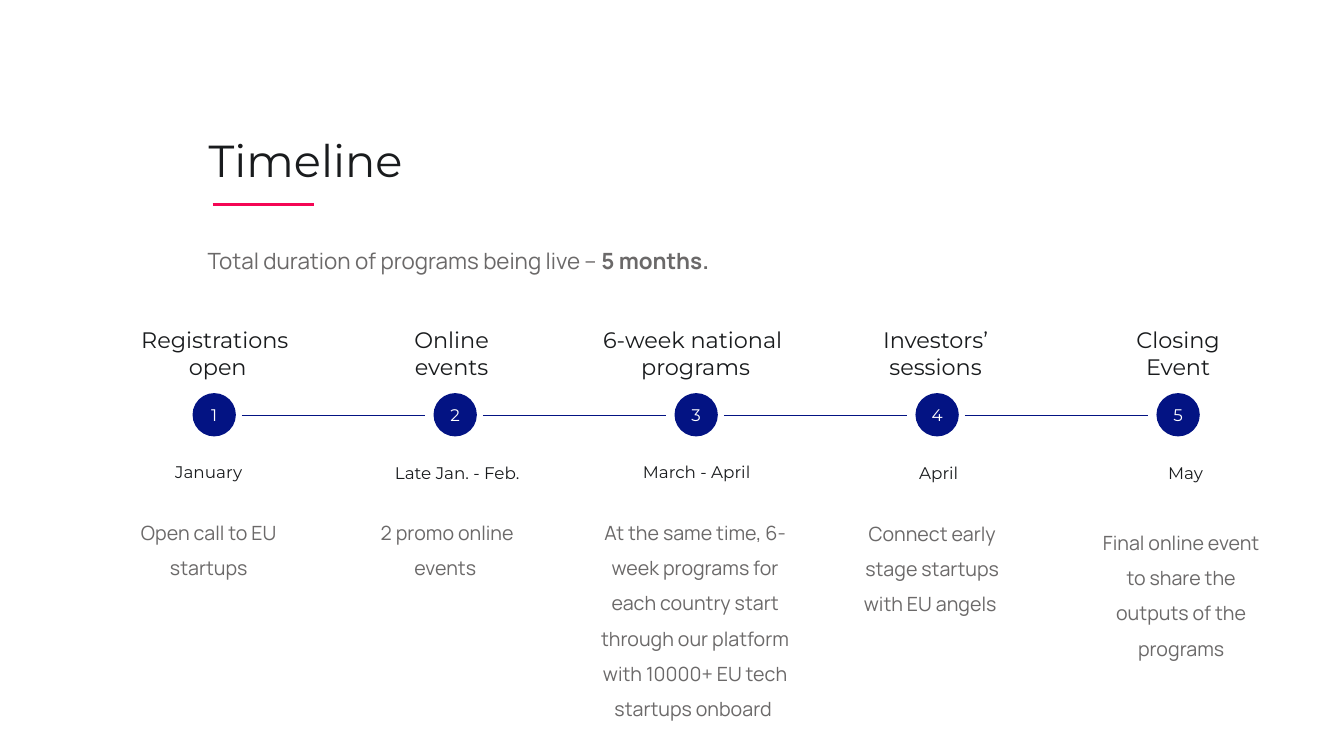
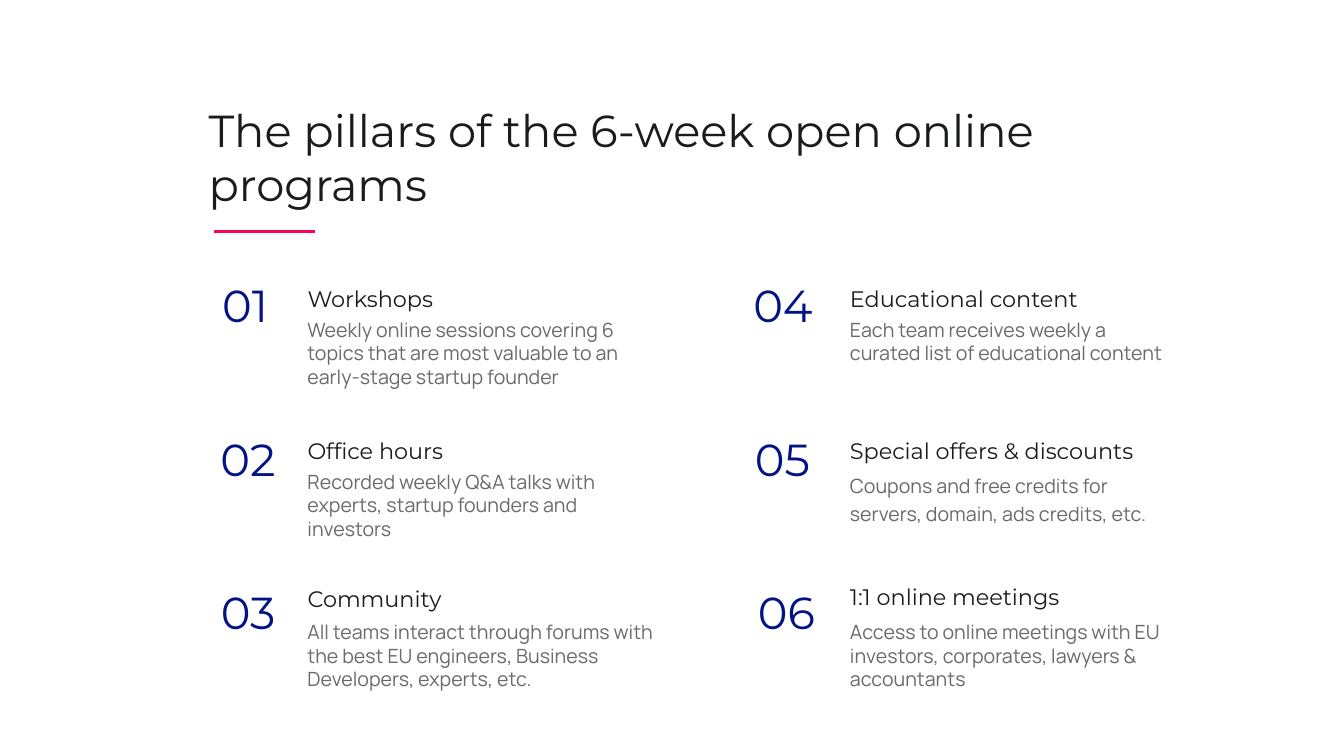
import dataclasses
import itertools
import typing

import lxml.etree
import pptx
import pptx.dml.color
import pptx.enum.shapes
import pptx.enum.text
import pptx.oxml.ns
import pptx.util

EMU_PER_PX = 9144  # 100 px to the inch
COLORS = {
    "ink": "191B1D",
    "grey": "6B6969",
    "navy": "031383",
    "accent": "F40654",
    "white": "FFFFFF",
}
ALIGN = pptx.enum.text.PP_ALIGN
ANCHOR = pptx.enum.text.MSO_ANCHOR


class Box(typing.NamedTuple):
    left: int
    top: int
    width: int
    height: int


class Insets(typing.NamedTuple):
    left: int = 0
    top: int = 0
    right: int = 0
    bottom: int = 0


class TextStyle(typing.NamedTuple):
    font: str
    size: int
    color: str
    insets: Insets = Insets()


FRAME_INSETS = Insets(10, 5, 10, 5)
BODY_INSETS = Insets(right=10)
TITLE = TextStyle("Montserrat", 32, "ink", FRAME_INSETS)
NUMBER = TextStyle("Montserrat", 32, "navy")
HEADING = TextStyle("Montserrat", 16, "ink")
DATE = TextStyle("Montserrat", 12, "ink")
MARKER = TextStyle("Montserrat", 12, "white", FRAME_INSETS)
SUMMARY = TextStyle("Manrope", 16, "grey", BODY_INSETS)
BODY = TextStyle("Manrope", 14, "grey", BODY_INSETS)


@dataclasses.dataclass(frozen=True)
class Stop:
    """One step of the timeline; each span is (left, width)."""

    heading: str
    heading_span: tuple[int, int]
    date: str
    date_span: tuple[int, int]
    body: str
    body_span: tuple[int, int]
    date_top: int = 459
    body_top: int = 505


@dataclasses.dataclass(frozen=True)
class Pillar:
    heading: str
    body: str
    number_width: int
    body_width: int
    heading_top: int
    body_top: int
    heading_spacing: float = 1.0
    body_spacing: float = 1.0


STOPS = [
    Stop("Registrations \nopen", (137, 158), "January", (122, 170),
         "Open call to EU startups", (133, 158), date_top=458),
    Stop("Online\nevents", (398, 100), "Late Jan. - Feb.", (388, 131),
         "2 promo online events ", (346, 205)),
    Stop("6-week national \nprograms", (597, 186), "March - April", (631, 120),
         "At the same time, 6-week programs for each country start through our "
         "platform with 10000+ EU tech startups onboard ", (586, 217), date_top=458),
    Stop("Investors’\nsessions", (871, 114), "April", (896, 70),
         "Connect early stage startups with EU angels ", (840, 179), body_top=506),
    Stop("Closing Event", (1101, 135), "May", (1141, 70),
         "Final online event to share the outputs of the programs", (1091, 171),
         body_top=515),
]

PILLARS = [
    Pillar("Workshops",
           "Weekly online sessions covering 6 topics that are most valuable "
           "to an early-stage startup founder", 92, 370, 283, 315),
    Pillar("Office hours",
           "Recorded weekly Q&A talks with experts, startup founders and investors",
           98, 363, 434, 466),
    Pillar("Community",
           "All teams interact through forums with the best EU engineers, "
           "Business Developers, experts, etc.", 98, 363, 581, 615),
    Pillar("Educational content",
           "Each team receives weekly a curated list of educational content",
           99, 323, 283, 315),
    Pillar("Special offers & discounts",
           "Coupons and free credits for servers, domain, ads credits, etc.",
           98, 329, 434, 465, body_spacing=1.2),
    Pillar("1:1 online meetings",
           "Access to online meetings with EU investors, corporates, lawyers & accountants",
           106, 319, 584, 615, heading_spacing=0.8),
]


def px(length: int) -> pptx.util.Emu:
    return pptx.util.Emu(length * EMU_PER_PX)


def rgb(name: str) -> pptx.dml.color.RGBColor:
    return pptx.dml.color.RGBColor.from_string(COLORS[name])


def write_text(shape, text: str, style: TextStyle, align=ALIGN.LEFT,
               spacing: float = 1.0, bold_ending: str = "") -> None:
    text_frame = shape.text_frame
    text_frame.word_wrap = True
    insets = style.insets
    text_frame.margin_left, text_frame.margin_top = px(insets.left), px(insets.top)
    text_frame.margin_right, text_frame.margin_bottom = px(insets.right), px(insets.bottom)
    text_frame.text = text
    if bold_ending:
        ending = text_frame.paragraphs[-1].add_run()
        ending.text = bold_ending
        ending.font.bold = True
    for paragraph in text_frame.paragraphs:
        paragraph.alignment = align
        paragraph.line_spacing = spacing
        for run in paragraph.runs:
            run.font.name = style.font
            run.font.size = pptx.util.Pt(style.size)
            run.font.color.rgb = rgb(style.color)


def add_text(parent, box: Box, text: str, style: TextStyle, align=ALIGN.LEFT,
             spacing: float = 1.0, bold_ending: str = "") -> None:
    """Add a text box to a slide or a group."""
    shape = parent.shapes.add_textbox(*map(px, box))
    write_text(shape, text, style, align, spacing, bold_ending)


def add_horizontal_line(slide, left: int, right: int, y: int,
                        color: str, width: float) -> None:
    connector = slide.shapes.add_connector(
        pptx.enum.shapes.MSO_CONNECTOR.STRAIGHT, px(left), px(y), px(right), px(y))
    connector.line.color.rgb = rgb(color)
    connector.line.width = pptx.util.Pt(width)
    lxml.etree.SubElement(connector.element.spPr, pptx.oxml.ns.qn("a:effectLst"))


def add_titled_slide(presentation, title: str, box: Box, rule_left: int,
                     rule_y: int, spacing: float = 1.0):
    """Add a blank slide with a title and the short accent rule below it."""
    slide = presentation.slides.add_slide(presentation.slide_layouts[6])
    add_text(slide, box, title, TITLE, spacing=spacing)
    add_horizontal_line(slide, rule_left, rule_left + 100, rule_y, "accent", 2)
    return slide


def add_marker(slide, box: Box, label: str) -> None:
    circle = slide.shapes.add_shape(pptx.enum.shapes.MSO_SHAPE.OVAL, *map(px, box))
    circle.shadow.inherit = False
    circle.fill.solid()
    circle.fill.fore_color.rgb = rgb("navy")
    circle.line.fill.background()
    circle.text_frame.vertical_anchor = ANCHOR.MIDDLE
    write_text(circle, label, MARKER, ALIGN.CENTER)


def add_number(group, box: Box, label: str) -> None:
    """Add a pillar's number in an unfilled outline."""
    right, bottom = box.left + box.width, box.top + box.height
    builder = group.shapes.build_freeform(box.left, box.top, scale=EMU_PER_PX)
    builder.add_line_segments([(right, box.top), (right, bottom), (box.left, bottom)])
    shape = builder.convert_to_shape()
    shape.shadow.inherit = False
    shape.fill.background()
    shape.line.fill.background()
    shape.text_frame.vertical_anchor = ANCHOR.TOP
    write_text(shape, label, NUMBER, ALIGN.CENTER)


def add_stop(slide, stop: Stop) -> None:
    for text, span, top, height, style, spacing in (
        (stop.heading, stop.heading_span, 324, 54, HEADING, 1.0),
        (stop.date, stop.date_span, stop.date_top, 20, DATE, 1.0),
        (stop.body, stop.body_span, stop.body_top, 200, BODY, 1.5),
    ):
        left, width = span
        add_text(slide, Box(left, top, width, height), text, style, ALIGN.CENTER, spacing)


def build_timeline(presentation) -> None:
    slide = add_titled_slide(presentation, "Timeline", Box(197, 137, 942, 54),
                             211, 203, spacing=0.8)
    add_text(slide, Box(206, 232, 865, 27), "Total duration of programs being live – ",
             SUMMARY, spacing=1.5, bold_ending="5 months.")
    first_left, pitch, diameter = 191, 239, 43
    for index, stop in enumerate(STOPS):
        left = first_left + index * pitch
        add_marker(slide, Box(left, 390, diameter, diameter), str(index + 1))
        if index < len(STOPS) - 1:
            add_horizontal_line(slide, left + diameter + 6, left + pitch - 8,
                                412, "navy", 0.75)
        add_stop(slide, stop)


def build_pillars(presentation) -> None:
    slide = add_titled_slide(presentation, "The pillars of the 6-week open online programs",
                             Box(197, 97, 866, 114), 212, 230)
    columns = ((197, 305), (727, 843))
    cells = itertools.product(columns, range(3))
    for index, (pillar, cell) in enumerate(zip(PILLARS, cells), start=1):
        (number_left, text_left), row = cell
        group = slide.shapes.add_group_shape()
        add_number(group, Box(number_left, 276 + 152 * row, pillar.number_width, 106),
                   f"{index:02d}")
        add_text(group, Box(text_left, pillar.heading_top, 305, 27),
                 pillar.heading, HEADING, spacing=pillar.heading_spacing)
        add_text(group, Box(text_left, pillar.body_top, pillar.body_width, 71),
                 pillar.body, BODY, spacing=pillar.body_spacing)


def main() -> None:
    presentation = pptx.Presentation()
    presentation.slide_width, presentation.slide_height = px(1333), px(750)
    build_timeline(presentation)
    build_pillars(presentation)
    presentation.save("out.pptx")


if __name__ == "__main__":
    main()
